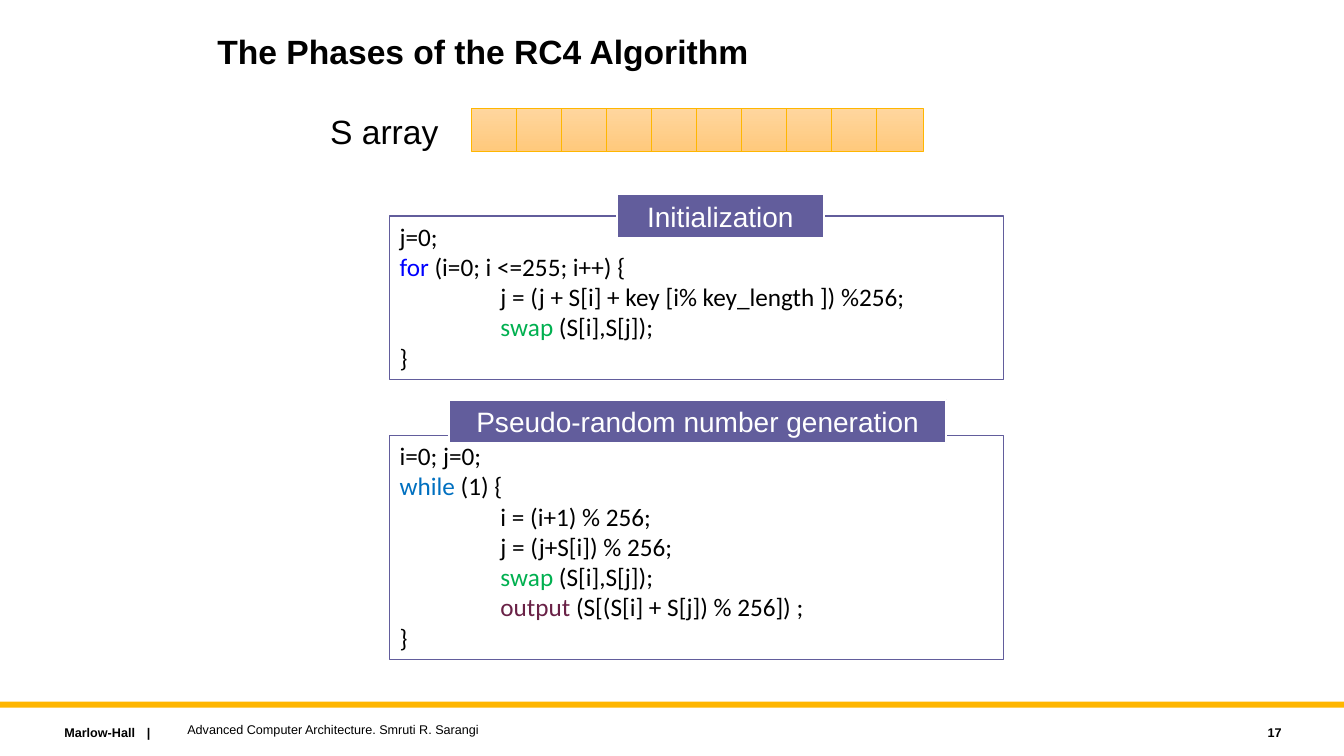
import pptx
import pptx.util
import pptx.dml.color
import pptx.enum.shapes
import pptx.enum.text
import lxml.etree

RGB = pptx.dml.color.RGBColor
Inches = pptx.util.Inches
Pt = pptx.util.Pt
ALIGN = pptx.enum.text.PP_ALIGN
ANCHOR = pptx.enum.text.MSO_ANCHOR
RECT = pptx.enum.shapes.MSO_SHAPE.RECTANGLE

WIDE, HIGH = Inches(13.33), Inches(7.5)
COL, ROW = WIDE / 100, HIGH / 100

BLACK = RGB(0x00, 0x00, 0x00)
WHITE = RGB(0xFF, 0xFF, 0xFF)
GOLD = RGB(0xFF, 0xB6, 0x00)
PEACH = RGB(0xFF, 0xD6, 0x9E)
AMBER = RGB(0xFF, 0xC9, 0x7C)
VIOLET = RGB(0x62, 0x5D, 0x9C)
TINTS = {
    "for": RGB(0x00, 0x00, 0xFF),
    "while": RGB(0x00, 0x70, 0xC0),
    "swap": RGB(0x00, 0xB0, 0x50),
    "output": RGB(0x69, 0x21, 0x46),
}

TITLE = {"name": "Arial", "size": Pt(24), "bold": True}
LABEL = {"name": "Arial", "size": Pt(24)}
HEAD = {"name": "Arial", "size": Pt(20)}
CODE = {"name": "Calibri", "size": Pt(18)}
NOTE = {"name": "Arial", "size": Pt(9)}
STRONG = {**NOTE, "bold": True}

SETUP = [
    "j=0;",
    "for (i=0; i <=255; i++) {",
    "\tj = (j + S[i] + key [i% key_length ]) %256;",
    "\tswap (S[i],S[j]);",
    "}",
]
STREAM = [
    "i=0; j=0;",
    "while (1) {",
    "\ti = (i+1) % 256;",
    "\tj = (j+S[i]) % 256;",
    "\tswap (S[i],S[j]);",
    "\toutput (S[(S[i] + S[j]) % 256]) ;",
    "}",
]


def apply(item, looks):
    for name, value in looks.items():
        setattr(item, name, value)


def grid(left, top, width, height):
    return [round(left * COL), round(top * ROW), round(width * COL), round(height * ROW)]


def add_run(para, text, font, color):
    run = para.add_run()
    run.text = text
    apply(run.font, font)
    run.font.color.rgb = color


def write(frame, text, font, color=BLACK, align=ALIGN.LEFT, anchor=ANCHOR.TOP, wrap=True):
    apply(frame, {"word_wrap": wrap, "vertical_anchor": anchor})
    para = frame.paragraphs[0]
    para.alignment = align
    add_run(para, text, font, color)
    return para


def add_text(slide, area, text, font, **looks):
    return write(slide.shapes.add_textbox(*grid(*area)).text_frame, text, font, **looks)


def add_box(slide, area, fill=None, line=None, weight=1):
    box = slide.shapes.add_shape(RECT, *grid(*area))
    box.shadow.inherit = False
    if fill is not None:
        box.fill.solid()
        box.fill.fore_color.rgb = fill
    if line is None:
        box.line.fill.background()
    else:
        box.line.color.rgb = line
        box.line.width = Pt(weight)
    return box


def add_tab(para, width):
    props = para._p.get_or_add_pPr()
    space = props.nsmap["a"]
    stops = lxml.etree.SubElement(props, f"{{{space}}}tabLst")
    lxml.etree.SubElement(stops, f"{{{space}}}tab", pos=str(Inches(width)), algn="l")


def add_code(slide, area, lines):
    frame = add_box(slide, area, WHITE, VIOLET).text_frame
    apply(frame, {"word_wrap": True, "vertical_anchor": ANCHOR.TOP})
    for index, line in enumerate(lines):
        para = frame.add_paragraph() if index else frame.paragraphs[0]
        para.alignment = ALIGN.LEFT
        word = line.split()[0]
        lead, key, rest = line.partition(word)
        if lead:
            add_tab(para, 1)
        parts = [(lead, BLACK), (key, TINTS.get(word, BLACK)), (rest, BLACK)]
        for text, color in parts:
            if text:
                add_run(para, text, CODE, color)


def add_head(slide, area, text):
    box = add_box(slide, area, VIOLET, WHITE, 1.5)
    write(box.text_frame, text, HEAD, WHITE, ALIGN.CENTER, ANCHOR.MIDDLE)


def add_array(slide, left, top, step, count):
    for index in range(count):
        cell = add_box(slide, (left + index * step, top, 3.45, 5.6), line=GOLD, weight=0.5)
        cell.fill.gradient()
        cell.fill.gradient_angle = 270
        for stop, color, place in zip(cell.fill.gradient_stops, (PEACH, AMBER), (0, 1)):
            stop.color.rgb = color
            stop.position = place


def add_title(slide, area, text):
    title = slide.shapes.title
    apply(title, dict(zip(("left", "top", "width", "height"), grid(*area))))
    write(title.text_frame, text, TITLE).line_spacing = 0.9


def add_foot(slide):
    add_box(slide, (0, 92.8, 100, 0.8), GOLD)
    add_tab(add_text(slide, (4.05, 95.2, 17, 3.33), "Marlow-Hall\t|", STRONG), 0.82)
    add_text(slide, (13.2, 94.88, 60, 3.33),
             "Advanced Computer Architecture. Smruti R. Sarangi", NOTE, anchor=ANCHOR.MIDDLE)
    add_text(slide, (85.6, 95.2, 10.5, 3.33), "17", STRONG,
             align=ALIGN.RIGHT, anchor=ANCHOR.MIDDLE)


def main():
    deck = pptx.Presentation()
    apply(deck, {"slide_width": WIDE, "slide_height": HIGH})
    slide = deck.slides.add_slide(deck.slide_layouts[5])
    add_foot(slide)
    add_title(slide, (15.43, 4, 56.26, 8.4), "The Phases of the RC4 Algorithm")
    add_code(slide, (29, 28.57, 45.69, 21.6), SETUP)
    add_head(slide, (45.88, 25.7, 15.45, 5.73), "Initialization")
    add_code(slide, (29, 57.6, 45.69, 29.6), STREAM)
    add_head(slide, (33.43, 52.88, 36.98, 5.73), "Pseudo-random number generation")
    add_array(slide, 35.09, 14.4, 3.35, 10)
    add_text(slide, (23.83, 14, 10.35, 6.67), "S array", LABEL, wrap=False)
    deck.save("out.pptx")


if __name__ == "__main__":
    main()
